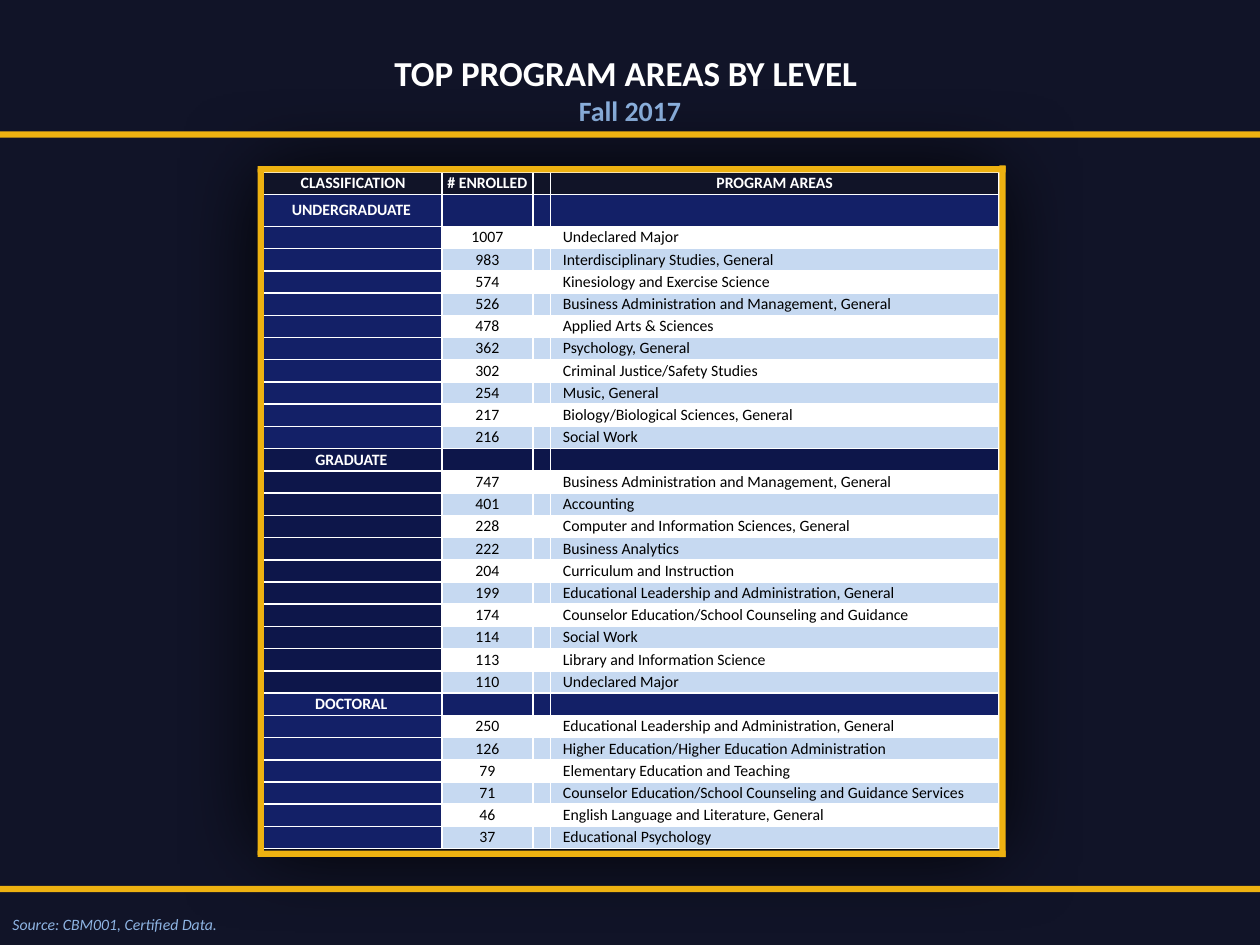
"""Build the slide of top program areas by level for Fall 2017."""
from lxml.etree import SubElement
from pptx import Presentation
from pptx.dml.color import RGBColor as RGB
from pptx.enum.shapes import MSO_SHAPE as Shape
from pptx.enum.text import MSO_ANCHOR as Anchor, MSO_AUTO_SIZE as Fit, PP_ALIGN as Align
from pptx.oxml import parse_xml
from pptx.oxml.ns import nsdecls, qn
from pptx.util import Pt

HUES = {"back": "111428", "gold": "EEB211", "sky": "8EB4E3", "white": "FFFFFF",
        "black": "000000", "band": "C6D9F1", "blue": "132067", "navy": "0D164A"}

LEVELS = [
    ("UNDERGRADUATE", "blue", [
        (1007, "Undeclared Major"),
        (983, "Interdisciplinary Studies, General"),
        (574, "Kinesiology and Exercise Science"),
        (526, "Business Administration and Management, General"),
        (478, "Applied Arts & Sciences"),
        (362, "Psychology, General"),
        (302, "Criminal Justice/Safety Studies"),
        (254, "Music, General"),
        (217, "Biology/Biological Sciences, General"),
        (216, "Social Work")]),
    ("GRADUATE", "navy", [
        (747, "Business Administration and Management, General"),
        (401, "Accounting"),
        (228, "Computer and Information Sciences, General"),
        (222, "Business Analytics"),
        (204, "Curriculum and Instruction"),
        (199, "Educational Leadership and Administration, General"),
        (174, "Counselor Education/School Counseling and Guidance"),
        (114, "Social Work"),
        (113, "Library and Information Science"),
        (110, "Undeclared Major")]),
    ("DOCTORAL", "blue", [
        (250, "Educational Leadership and Administration, General"),
        (126, "Higher Education/Higher Education Administration"),
        (79, "Elementary Education and Teaching"),
        (71, "Counselor Education/School Counseling and Guidance Services"),
        (46, "English Language and Literature, General"),
        (37, "Educational Psychology")]),
]


def write(para, text, size=9, hue="white", bold=False, italic=False, align=Align.CENTER):
    para.alignment = align
    run = para.add_run()
    run.text = text
    font = run.font
    font.name, font.size, font.bold, font.italic = "Calibri", Pt(size), bold, italic
    font.color.rgb = RGB.from_string(HUES[hue])


deck = Presentation()
deck.slide_width, deck.slide_height = Pt(720), Pt(540)
slide = deck.slides.add_slide(deck.slide_layouts[5])
slide.background.fill.solid()
slide.background.fill.fore_color.rgb = RGB.from_string(HUES["back"])

title = slide.shapes.title
title.left, title.top, title.width, title.height = Pt(0), Pt(26), Pt(720), Pt(72.5)
frame = title.text_frame
frame.auto_size, frame.vertical_anchor = Fit.NONE, Anchor.TOP
head = frame.paragraphs[0]
write(head, "TOP PROGRAM AREAS BY LEVEL ", size=20, bold=True)
head.add_line_break()
write(head, "Fall 2017", size=16, hue="sky", bold=True)

rows = [([" CLASSIFICATION", "# ENROLLED", "", "PROGRAM AREAS"], ["back"] * 4, True)]
for level, hue, areas in LEVELS:
    rows.append(([level, "", "", ""], [hue] * 4, True))
    for i, (count, area) in enumerate(areas):
        band = "band" if i % 2 else "white"
        rows.append((["", str(count), "", area], [hue] + [band] * 3, False))

grid = slide.shapes.add_table(len(rows), 4, Pt(149), Pt(98.4), Pt(421.9), Pt(387)).table
grid._tbl.tblPr.insert(0, parse_xml(
    f'<a:effectLst {nsdecls("a")}><a:outerShdw blurRad="{Pt(50)}" algn="ctr" rotWithShape="0">'
    '<a:srgbClr val="000000"/></a:outerShdw></a:effectLst>'))
for col, width in zip(grid.columns, [103.5, 52, 10, 256.4]):
    col.width = Pt(width)
for r, (texts, fills, bold) in enumerate(rows):
    grid.rows[r].height = Pt(18.3 if r == 1 else 12.7)
    for c, (text, fill) in enumerate(zip(texts, fills)):
        cell = grid.cell(r, c)
        cell.margin_left = cell.margin_right = cell.margin_top = cell.margin_bottom = 0
        cell.vertical_anchor = Anchor.MIDDLE
        cell.fill.solid()
        cell.fill.fore_color.rgb = RGB.from_string(HUES[fill])
        para = cell.text_frame.paragraphs[0]
        if not text:
            SubElement(para._p, qn("a:endParaRPr"), sz="900")
            continue
        left = c == 3 and not bold
        write(para, text, hue="white" if bold else "black", bold=bold,
              align=Align.LEFT if left else Align.CENTER)
        if left:
            para._p.get_or_add_pPr().set("marL", str(Pt(7.2)))

note = slide.shapes.add_textbox(Pt(0), Pt(519.2), Pt(137.5), Pt(18)).text_frame
note.word_wrap = True
write(note.paragraphs[0], "Source: CBM001, Certified Data.", hue="sky", italic=True,
      align=Align.LEFT)

THICK = 3.6
for x, y, width, height in [
        (0, 506.2, 720, THICK), (0, 75, 720, THICK),
        (147.2, 94.9, 427.5, THICK), (147.2, 486, 427.5, THICK),
        (571, 94.5, THICK, 395.3), (147.2, 96.5, THICK, 392)]:
    bar = slide.shapes.add_shape(Shape.RECTANGLE, Pt(x), Pt(y), Pt(width), Pt(height))
    bar.shadow.inherit = False
    bar.fill.solid()
    bar.fill.fore_color.rgb = RGB.from_string(HUES["gold"])
    bar.line.fill.background()

deck.save("out.pptx")
